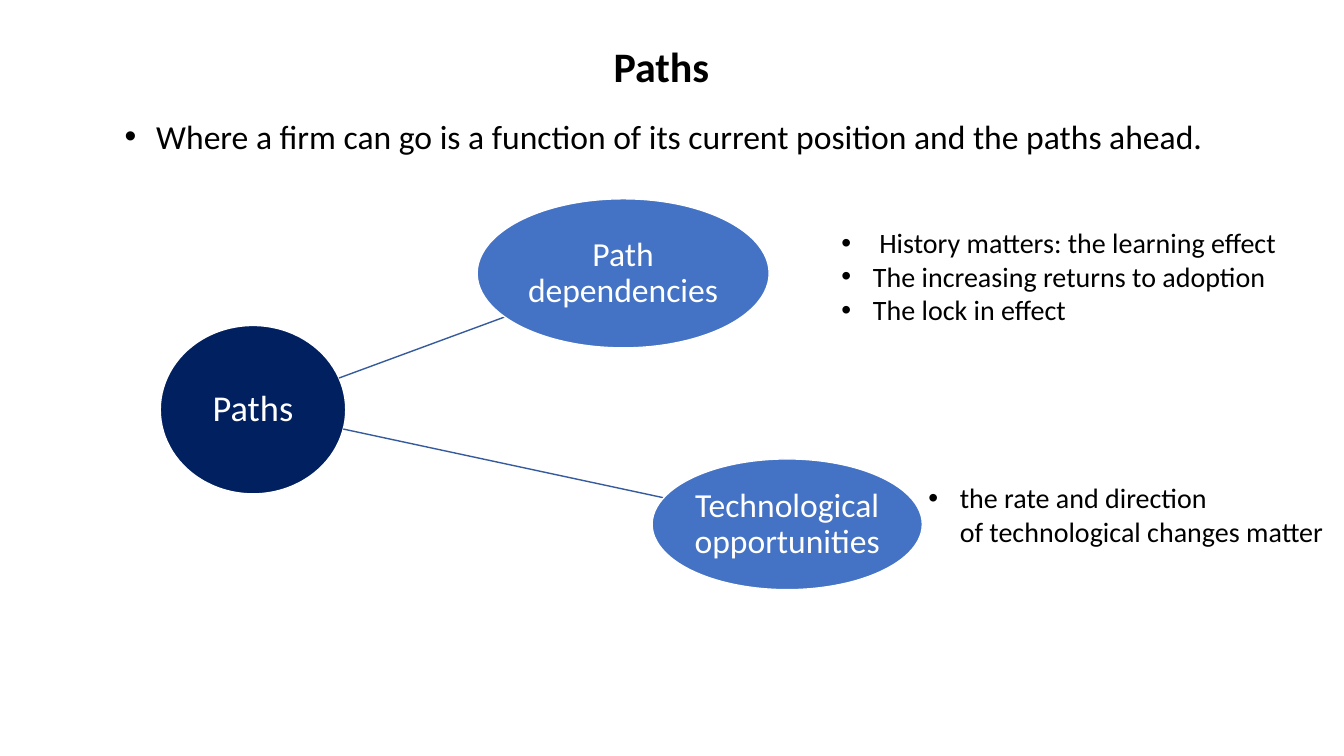
import math

from lxml import etree
from pptx import Presentation
from pptx.dml.color import RGBColor
from pptx.enum.shapes import MSO_CONNECTOR, MSO_SHAPE
from pptx.enum.text import MSO_ANCHOR, PP_ALIGN
from pptx.oxml.ns import qn
from pptx.util import Pt

STRAIGHT = MSO_CONNECTOR.STRAIGHT
ELLIPSE = MSO_SHAPE.OVAL
MIDDLE = MSO_ANCHOR.MIDDLE
CENTER = PP_ALIGN.CENTER

BLACK = RGBColor(0x00, 0x00, 0x00)
WHITE = RGBColor(0xFF, 0xFF, 0xFF)
NAVY = RGBColor(0x00, 0x20, 0x60)
BLUE = RGBColor(0x44, 0x72, 0xC4)
LINK_BLUE = RGBColor(0x36, 0x5B, 0x9D)
FONT = "Calibri"

# Boxes are left, top, width, height in points
TITLE_BOX = (0, 0, 945, 98.6)
STATEMENT_BOX = (82, 79.2, 802, 36)
HUB_BOX = (114.5, 232.5, 132.5, 120.3)
BRANCHES = [
    ("Path dependencies", (340.8, 142, 208.6, 106.5)),
    ("Technological opportunities", (465.8, 327.8, 193, 93.4)),
]
# Each bullet is its hanging indent and its lines
STATEMENT = [(22.5, ["Where a firm can go is a function of its current position "
                     "and the paths ahead."])]
NOTES = [
    ((594, 157.7, 346, 80), [
        (27, ["History matters: the learning effect"]),
        (22.5, ["The increasing returns to adoption"]),
        (22.5, ["The lock in effect"]),
    ]),
    ((656, 339.8, 302, 55.4), [
        (22.5, ["the rate and direction", "of technological changes matter"]),
    ]),
]


def add_run(paragraph, text, size, color, bold=False):
    run = paragraph.add_run()
    run.text = text
    run.font.name = FONT
    run.font.size = Pt(size)
    run.font.bold = bold
    run.font.color.rgb = color


def add_centered_text(shape, text, size, color, bold=False):
    frame = shape.text_frame
    frame.word_wrap = True
    frame.vertical_anchor = MIDDLE
    paragraph = frame.paragraphs[0]
    paragraph.alignment = CENTER
    paragraph.line_spacing = 0.9
    add_run(paragraph, text, size, color, bold)
    return frame


def add_title(slide, box):
    shape = slide.shapes.add_textbox(*map(Pt, box))
    add_centered_text(shape, "Paths", 30, BLACK, bold=True)


def add_bullet_list(slide, box, bullets, size):
    frame = slide.shapes.add_textbox(*map(Pt, box)).text_frame
    frame.word_wrap = True
    for index, (indent, lines) in enumerate(bullets):
        paragraph = frame.add_paragraph() if index else frame.paragraphs[0]
        for line_index, line in enumerate(lines):
            if line_index:
                paragraph.add_line_break()
            add_run(paragraph, line, size, BLACK)
        # Hanging bullet
        properties = paragraph._p.get_or_add_pPr()
        properties.set("marL", str(Pt(indent)))
        properties.set("indent", str(-Pt(indent)))
        etree.SubElement(properties, qn("a:buFont"), typeface="Arial")
        etree.SubElement(properties, qn("a:buChar"), char="•")


def add_node(slide, box, text, size, color):
    shape = slide.shapes.add_shape(ELLIPSE, *map(Pt, box))
    shape.shadow.inherit = False
    shape.fill.solid()
    shape.fill.fore_color.rgb = color
    shape.line.color.rgb = WHITE
    shape.line.width = Pt(1)
    frame = add_centered_text(shape, text, size, WHITE)
    frame.margin_left = frame.margin_right = Pt(1.3)
    frame.margin_top = frame.margin_bottom = Pt(1.3)


def center_of(box):
    left, top, width, height = box
    return left + width / 2, top + height / 2


def edge_point(box, target):
    """Point where the line from the ellipse's center to target leaves it."""
    x, y = center_of(box)
    dx, dy = target[0] - x, target[1] - y
    ratio = 1 / math.hypot(dx / (box[2] / 2), dy / (box[3] / 2))
    return x + dx * ratio, y + dy * ratio


def add_link(slide, start_box, end_box):
    start = edge_point(start_box, center_of(end_box))
    end = edge_point(end_box, center_of(start_box))
    connector = slide.shapes.add_connector(STRAIGHT, *map(Pt, start + end))
    connector.line.color.rgb = LINK_BLUE
    connector.line.width = Pt(1)
    etree.SubElement(connector._element.spPr, qn("a:effectLst"))


def add_path_diagram(slide, hub_box, branches):
    add_node(slide, hub_box, "Paths", 26, NAVY)
    for text, box in branches:
        add_link(slide, hub_box, box)
        add_node(slide, box, text, 24, BLUE)


def main():
    presentation = Presentation()
    presentation.slide_width = Pt(960)
    presentation.slide_height = Pt(540)
    slide = presentation.slides.add_slide(presentation.slide_layouts[6])

    # Heading and statement
    add_title(slide, TITLE_BOX)
    add_bullet_list(slide, STATEMENT_BOX, STATEMENT, 24)

    # Diagram with its side notes
    add_path_diagram(slide, HUB_BOX, BRANCHES)
    for box, bullets in NOTES:
        add_bullet_list(slide, box, bullets, 20)

    presentation.save("out.pptx")


if __name__ == "__main__":
    main()
